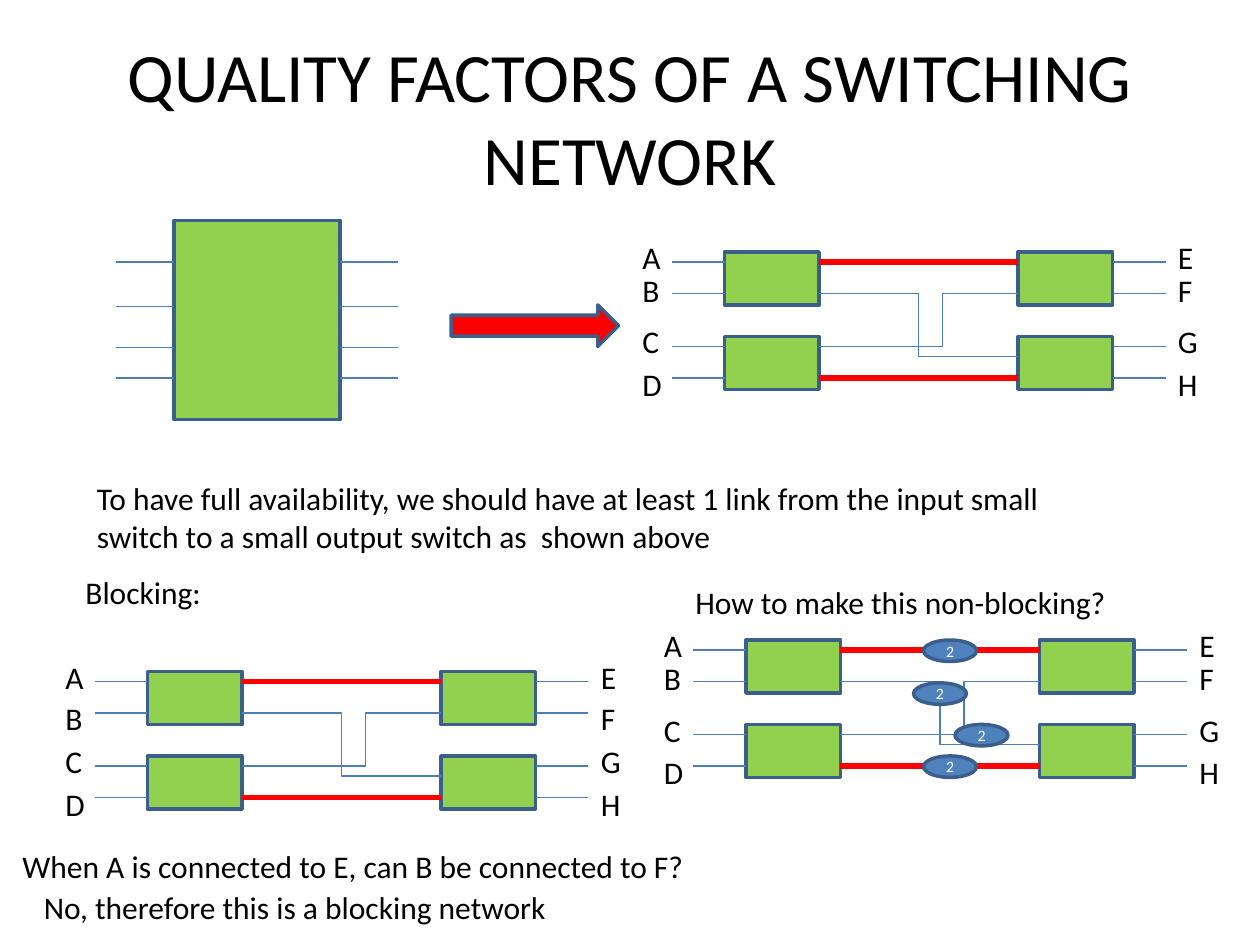
from itertools import product

from lxml.etree import SubElement
from pptx import Presentation
from pptx.dml.color import RGBColor
from pptx.enum.shapes import MSO_CONNECTOR, MSO_SHAPE
from pptx.enum.text import MSO_ANCHOR, MSO_AUTO_SIZE, PP_ALIGN
from pptx.oxml.ns import qn
from pptx.util import Inches, Pt

BLACK = RGBColor(0x00, 0x00, 0x00)
WHITE = RGBColor(0xFF, 0xFF, 0xFF)
GREEN = RGBColor(0x92, 0xD0, 0x50)
RED = RGBColor(0xFF, 0x00, 0x00)
BLUE = RGBColor(0x4F, 0x81, 0xBD)
WIRE_BLUE = RGBColor(0x4B, 0x7E, 0xBC)
EDGE_BLUE = RGBColor(0x3A, 0x5F, 0x8C)

BODY_FONT = {"name": "Calibri", "size": Pt(18)}
COUNT_FONT = {"name": "Calibri", "size": Pt(9)}
TITLE_FONT = {"name": "Calibri", "size": Pt(39.6)}
TITLE_BOX = {"left": Inches(0.5), "top": Inches(0.3),
             "width": Inches(9), "height": Inches(1.25)}
TEXT_FRAME = {"word_wrap": True, "auto_size": MSO_AUTO_SIZE.SHAPE_TO_FIT_TEXT}
TITLE_FRAME = {"word_wrap": True, "auto_size": MSO_AUTO_SIZE.NONE,
               "vertical_anchor": MSO_ANCHOR.MIDDLE}
COUNT_FRAME = {"margin_left": 0, "margin_right": 0, "margin_top": 0,
               "margin_bottom": 0, "vertical_anchor": MSO_ANCHOR.MIDDLE}

STUB = Inches(0.42)
SWITCH_WIDTH, SWITCH_HEIGHT = Inches(0.75), Inches(0.42)
SWITCH_LEFTS = Inches(0.42), Inches(2.75)
SWITCH_TOPS = Inches(0), Inches(0.67)
LINK_TOPS = Inches(0.08), Inches(1)


def apply_format(target, values):
    for attribute, value in values.items():
        setattr(target, attribute, value)


def write(paragraph, text, font, color, align=PP_ALIGN.LEFT):
    paragraph.alignment = align
    run = paragraph.add_run()
    run.text = text
    apply_format(run.font, font)
    run.font.color.rgb = color


def add_text(slide, text, left, top, width, height=Inches(0.4)):
    frame = slide.shapes.add_textbox(left, top, width, height).text_frame
    apply_format(frame, TEXT_FRAME)
    write(frame.paragraphs[0], text, BODY_FONT, BLACK)


def add_block(slide, kind, left, top, width, height, fill):
    block = slide.shapes.add_shape(kind, left, top, width, height)
    block.shadow.inherit = False
    block.fill.solid()
    block.fill.fore_color.rgb = fill
    block.line.color.rgb = EDGE_BLUE
    block.line.width = Pt(2)
    return block


def add_wire(slide, start, end, color=WIRE_BLUE, width=0.75, bend=None):
    kind = MSO_CONNECTOR.STRAIGHT if bend is None else MSO_CONNECTOR.ELBOW
    wire = slide.shapes.add_connector(kind, *start, *end)
    wire.line.color.rgb = color
    wire.line.width = Pt(width)
    properties = wire._element.spPr
    SubElement(properties, qn("a:effectLst"))
    if bend is not None:
        guides = properties.find(qn("a:prstGeom")).get_or_add_avLst()
        SubElement(guides, qn("a:gd"), name="adj1", fmla=f"val {round(bend * 100000)}")


def add_stubs(slide, left, tops, length=STUB):
    for top in tops:
        add_wire(slide, (left, top), (left + length, top))


def add_title(slide, text):
    title = slide.shapes.title
    apply_format(title, TITLE_BOX)
    apply_format(title.text_frame, TITLE_FRAME)
    write(title.text_frame.paragraphs[0], text, TITLE_FONT, BLACK, PP_ALIGN.CENTER)


def add_single_switch(slide, left, top):
    width, stub = Inches(1.32), Inches(0.46)
    add_block(slide, MSO_SHAPE.FLOWCHART_PROCESS, left, top, width, Inches(1.58), GREEN)
    stub_tops = [top + Inches(drop) for drop in (0.33, 0.68, 1.01, 1.25)]
    for stub_left in (left - stub, left + width):
        add_stubs(slide, stub_left, stub_tops, stub)


def add_small_switch(slide, left, top, crossed):
    add_block(slide, MSO_SHAPE.RECTANGLE, left, top, SWITCH_WIDTH, SWITCH_HEIGHT, GREEN)
    straight = top + Inches(0.08), top + Inches(0.33)
    shifted = top + Inches(0.16), top + Inches(0.33)
    add_stubs(slide, left - STUB, shifted if crossed else straight)
    add_stubs(slide, left + SWITCH_WIDTH, straight)


def add_network(slide, left, top, second_label=0.1):
    for switch_left, switch_top in product(SWITCH_LEFTS, SWITCH_TOPS):
        lower_output = (switch_left, switch_top) == (SWITCH_LEFTS[1], SWITCH_TOPS[1])
        add_small_switch(slide, left + switch_left, top + switch_top, lower_output)

    link_start = left + SWITCH_LEFTS[0] + SWITCH_WIDTH
    link_end = left + SWITCH_LEFTS[1]
    for link_top in LINK_TOPS:
        add_wire(slide, (link_start, top + link_top), (link_end, top + link_top), RED, 3.25)

    cross_start, cross_end = link_start + Inches(0.08), link_end - Inches(0.08)
    cross_top = top + Inches(0.33)
    add_wire(slide, (cross_start, cross_top), (cross_end, top + Inches(0.83)), bend=0.5)
    add_wire(slide, (cross_end, cross_top), (cross_start, top + Inches(0.75)), bend=0.366)

    label_drops = (-0.16, second_label, 0.51, 0.85)
    for labels, label_left in (("ABCD", -0.33), ("EFGH", 3.92)):
        for label, drop in zip(labels, label_drops):
            add_text(slide, label, left + Inches(label_left), top + Inches(drop), Inches(0.33))


def add_link_counts(slide, left, top):
    for count_left, count_top in ((1.83, 0), (1.83, 0.92), (1.75, 0.34), (2.08, 0.67)):
        count = add_block(slide, MSO_SHAPE.OVAL, left + Inches(count_left),
                          top + Inches(count_top), Inches(0.42), Inches(0.17), BLUE)
        apply_format(count.text_frame, COUNT_FRAME)
        write(count.text_frame.paragraphs[0], "2", COUNT_FONT, WHITE, PP_ALIGN.CENTER)


def add_statements(slide):
    statements = (
        ("To have full availability, we should have at least 1 link from the input small "
         "switch to a small output switch as  shown above", 0.67, 3.75, 8, 0.71),
        ("Blocking:", 0.58, 4.5, 8, 0.4),
        ("How to make this non-blocking?", 5.42, 4.58, 4.33, 0.4),
        ("When A is connected to E, can B be connected to F?", 0.08, 6.67, 5.5, 0.4),
        ("No, therefore this is a blocking network", 0.25, 7, 4.33, 0.4),
    )
    for text, *box in statements:
        add_text(slide, text, *map(Inches, box))


def main():
    presentation = Presentation()
    presentation.slide_width = Inches(10)
    presentation.slide_height = Inches(7.5)
    slide = presentation.slides.add_slide(presentation.slide_layouts[5])

    add_title(slide, "QUALITY FACTORS OF A SWITCHING NETWORK")
    add_single_switch(slide, Inches(1.38), Inches(1.75))
    add_block(slide, MSO_SHAPE.RIGHT_ARROW, Inches(3.58), Inches(2.42),
              Inches(1.33), Inches(0.33), RED)
    add_network(slide, Inches(5.33), Inches(2))
    add_statements(slide)
    add_network(slide, Inches(0.75), Inches(5.33), second_label=0.17)
    add_network(slide, Inches(5.5), Inches(5.08))
    add_link_counts(slide, Inches(5.5), Inches(5.08))
    presentation.save("out.pptx")


if __name__ == "__main__":
    main()
